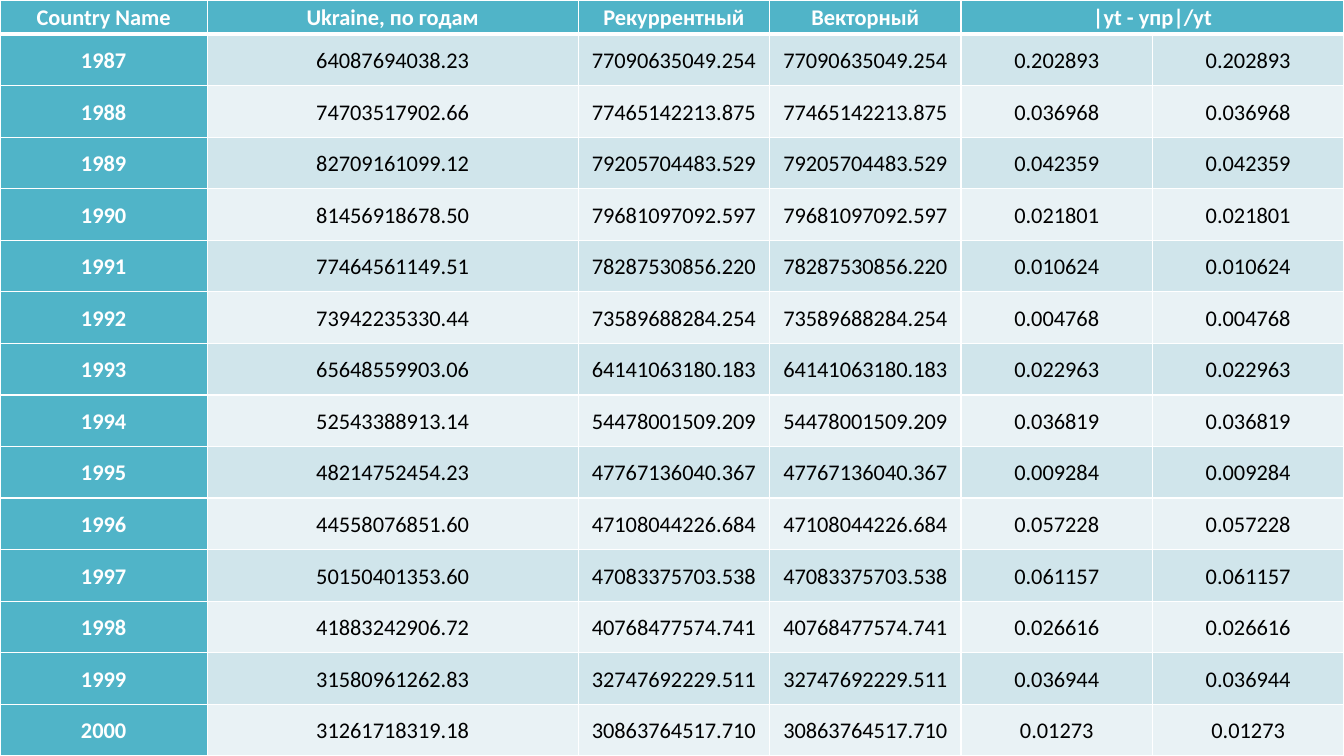
from dataclasses import dataclass

from lxml import etree
from pptx import Presentation
from pptx.dml.color import RGBColor
from pptx.enum.text import MSO_ANCHOR, PP_ALIGN
from pptx.oxml.ns import qn
from pptx.util import Pt

CENTER = PP_ALIGN.CENTER
MIDDLE = MSO_ANCHOR.MIDDLE


@dataclass(frozen=True)
class Theme:
    font: str = "Calibri"
    size: float = 16
    accent: str = "50B4C8"
    bands: tuple = ("D0E5EB", "E9F2F5")
    light: str = "FFFFFF"
    dark: str = "000000"
    thin: float = 1
    thick: float = 3


THEME = Theme()


def write_cell(cell, text, color=THEME.dark, bold=False):
    cell.vertical_anchor = MIDDLE
    cell.margin_left = cell.margin_right = Pt(2.16)
    cell.margin_top = cell.margin_bottom = 0
    paragraph = cell.text_frame.paragraphs[0]
    paragraph.alignment = CENTER
    paragraph.line_spacing = 1.07
    run = paragraph.add_run()
    run.text = text
    run.font.name = THEME.font
    run.font.size = Pt(THEME.size)
    run.font.bold = bold
    run.font.color.rgb = RGBColor.from_string(color)


def style_cell(cell, fill, top, bottom):
    properties = cell._tc.get_or_add_tcPr()
    widths = {"a:lnL": THEME.thin, "a:lnR": THEME.thin, "a:lnT": top, "a:lnB": bottom}
    for tag, width in widths.items():
        line = etree.SubElement(properties, qn(tag), w=str(Pt(width)))
        solid = etree.SubElement(line, qn("a:solidFill"))
        etree.SubElement(solid, qn("a:srgbClr"), val=THEME.light)
    cell.fill.solid()
    cell.fill.fore_color.rgb = RGBColor.from_string(fill)


# Content: the recurrent and vector forecasts coincide, and so do their errors
HEADERS = ["Country Name", "Ukraine, по годам", "Рекуррентный", "Векторный", "|yt - yпр|/yt", ""]
FIRST_YEAR = 1987
FORECASTS = [  # actual value, forecast, relative error
    ("64087694038.23", "77090635049.254", "0.202893"),
    ("74703517902.66", "77465142213.875", "0.036968"),
    ("82709161099.12", "79205704483.529", "0.042359"),
    ("81456918678.50", "79681097092.597", "0.021801"),
    ("77464561149.51", "78287530856.220", "0.010624"),
    ("73942235330.44", "73589688284.254", "0.004768"),
    ("65648559903.06", "64141063180.183", "0.022963"),
    ("52543388913.14", "54478001509.209", "0.036819"),
    ("48214752454.23", "47767136040.367", "0.009284"),
    ("44558076851.60", "47108044226.684", "0.057228"),
    ("50150401353.60", "47083375703.538", "0.061157"),
    ("41883242906.72", "40768477574.741", "0.026616"),
    ("31580961262.83", "32747692229.511", "0.036944"),
    ("31261718319.18", "30863764517.710", "0.01273"),
]
rows = [HEADERS]
for year, (actual, forecast, error) in enumerate(FORECASTS, FIRST_YEAR):
    rows.append([str(year), actual, forecast, forecast, error, error])

# Slide
WIDTH, HEIGHT = 960, 540
presentation = Presentation()
presentation.slide_width, presentation.slide_height = Pt(WIDTH), Pt(HEIGHT)
slide = presentation.slides.add_slide(presentation.slide_layouts[6])

# Table grid fills the slide
YEAR_WIDTH, ACTUAL_WIDTH, HEADER_HEIGHT = 148, 265, 24.4
value_width = (WIDTH - YEAR_WIDTH - ACTUAL_WIDTH) / 4
row_height = (HEIGHT - HEADER_HEIGHT) / len(FORECASTS)
table = slide.shapes.add_table(len(rows), len(HEADERS), 0, 0, Pt(WIDTH), Pt(HEIGHT)).table
table.first_col = True
for column, width in zip(table.columns, [YEAR_WIDTH, ACTUAL_WIDTH] + [value_width] * 4):
    column.width = Pt(width)
for row, height in zip(table.rows, [HEADER_HEIGHT] + [row_height] * len(FORECASTS)):
    row.height = Pt(height)
table.cell(0, 4).merge(table.cell(0, 5))

# Cells: accent header row and year column, banded values
for row_index, values in enumerate(rows):
    top = THEME.thick if row_index == 1 else THEME.thin
    bottom = THEME.thick if row_index == 0 else THEME.thin
    for column_index, text in enumerate(values):
        cell = table.cell(row_index, column_index)
        is_heading = row_index == 0 or column_index == 0
        fill = THEME.accent if is_heading else THEME.bands[(row_index - 1) % 2]
        style_cell(cell, fill, top, bottom)
        if not cell.is_spanned:
            write_cell(cell, text, color=THEME.light if is_heading else THEME.dark, bold=is_heading)

presentation.save("out.pptx")
